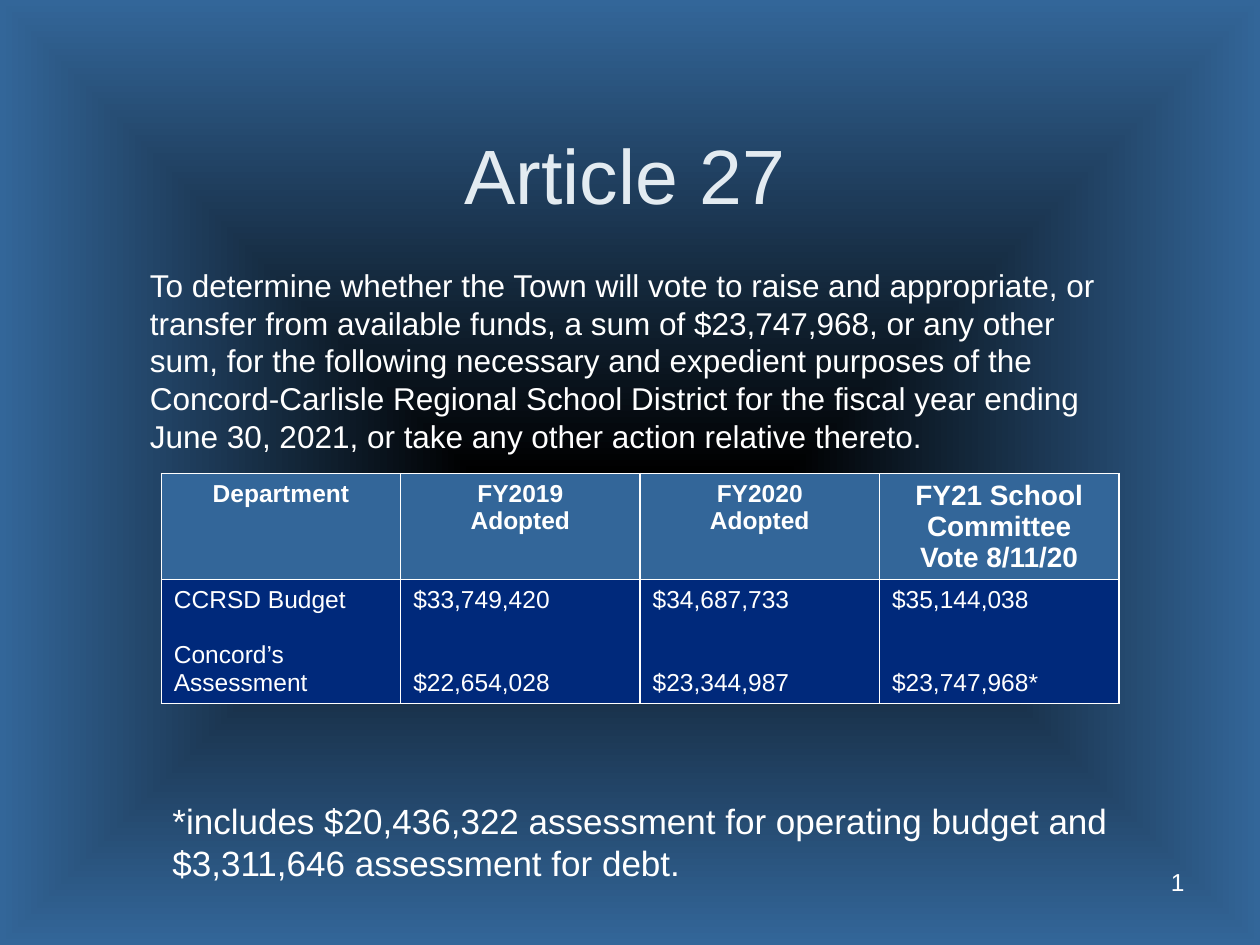
from lxml import etree
from pptx import Presentation
from pptx.dml.color import RGBColor
from pptx.enum.text import MSO_ANCHOR, MSO_AUTO_SIZE, PP_ALIGN
from pptx.oxml import parse_xml
from pptx.oxml.ns import nsdecls, qn
from pptx.util import Inches, Pt

FONT = "Arial"
WHITE = RGBColor(0xFF, 0xFF, 0xFF)
BLACK = RGBColor(0x00, 0x00, 0x00)
PALE = RGBColor(0xE3, 0xEB, 0xF1)
BLUE = RGBColor(0x33, 0x66, 0x99)
NAVY = RGBColor(0x00, 0x29, 0x7B)

HEADINGS = [
    ("Department",),
    ("FY2019", "Adopted"),
    ("FY2020", "Adopted"),
    ("FY21 School Committee", "Vote 8/11/20"),
]
FIGURES = [
    ("CCRSD Budget", "Concord’s Assessment"),
    ("$33,749,420", "$22,654,028"),
    ("$34,687,733", "$23,344,987"),
    ("$35,144,038", "$23,747,968*"),
]


def write(tf, lines, size, color=WHITE, align=PP_ALIGN.LEFT, bold=False):
    tf.text = "\n".join(lines)
    for p in tf.paragraphs:
        p.alignment = align
        p.space_before = Pt(0)
        for r in p.runs:
            r.font.name = FONT
            r.font.size = Pt(size)
            r.font.bold = bold
            r.font.color.rgb = color


def place(sp, box):
    sp.left, sp.top, sp.width, sp.height = (Inches(v) for v in box)


def add_background(slide):
    fill = slide.background.fill
    fill.gradient()
    for stop, color, position in zip(fill.gradient_stops, (BLACK, BLUE), (0, 1)):
        stop.color.rgb = color
        stop.position = position
    grad = slide.background._cSld.find(".//" + qn("a:gradFill"))
    grad.remove(grad.find(qn("a:lin")))
    grad.append(parse_xml(
        f'<a:path {nsdecls("a")} path="rect">'
        '<a:fillToRect l="50000" t="50000" r="50000" b="50000"/></a:path>'))


def add_title(slide, box):
    sp = slide.shapes.title
    place(sp, box)
    tf = sp.text_frame
    tf.auto_size = MSO_AUTO_SIZE.NONE
    tf.vertical_anchor = MSO_ANCHOR.MIDDLE
    write(tf, ["Article 27"], 44, PALE, PP_ALIGN.CENTER)


def add_body(slide, box):
    sp = slide.placeholders[1]
    place(sp, box)
    tf = sp.text_frame
    tf.auto_size = MSO_AUTO_SIZE.NONE
    tf.margin_right = Inches(0.3)
    write(tf, [
        "To determine whether the Town will vote to raise and appropriate, or "
        "transfer from available funds, a sum of $23,747,968, or any other sum, "
        "for the following necessary and expedient purposes of the "
        "Concord-Carlisle Regional School District for the fiscal year ending "
        "June 30, 2021, or take any other action relative thereto."], 18)
    pPr = tf.paragraphs[0]._p.get_or_add_pPr()
    pPr.set("marL", "0")
    pPr.set("indent", "0")
    etree.SubElement(pPr, qn("a:buNone"))


def style_cell(cell, color):
    tcPr = cell._tc.get_or_add_tcPr()
    for side in ("lnL", "lnR", "lnT", "lnB"):
        tcPr.append(parse_xml(
            f'<a:{side} {nsdecls("a")} w="{Pt(1)}"><a:solidFill>'
            f'<a:srgbClr val="{WHITE}"/></a:solidFill></a:{side}>'))
    cell.fill.solid()
    cell.fill.fore_color.rgb = color


def add_budget_table(slide, box):
    table = slide.shapes.add_table(2, 4, *(Inches(v) for v in box)).table
    table.rows[0].height = Inches(0.84)
    table.rows[1].height = Inches(0.98)
    for i, (heading, figures) in enumerate(zip(HEADINGS, FIGURES)):
        head, body = table.cell(0, i), table.cell(1, i)
        style_cell(head, BLUE)
        style_cell(body, NAVY)
        size = 16 if i == 3 else 14
        write(head.text_frame, heading, size, align=PP_ALIGN.CENTER, bold=True)
        write(body.text_frame, figures, 14)
        body.text_frame.paragraphs[1].space_before = Pt(16 if i == 0 else 32)


def add_footnote(slide, box):
    tf = slide.shapes.add_textbox(*(Inches(v) for v in box)).text_frame
    tf.word_wrap = False
    tf.auto_size = MSO_AUTO_SIZE.SHAPE_TO_FIT_TEXT
    write(tf, ["*includes $20,436,322 assessment for operating budget and",
               "$3,311,646 assessment for debt."], 20)


def add_slide_number(slide, box):
    tf = slide.shapes.add_textbox(*(Inches(v) for v in box)).text_frame
    tf.word_wrap = True
    write(tf, ["1"], 14, align=PP_ALIGN.RIGHT)
    r = tf.paragraphs[0].runs[0]._r
    r.tag = qn("a:fld")
    r.set("id", "{B6F15528-21DE-4FAA-801E-634DDDAF4B2B}")
    r.set("type", "slidenum")


def main():
    prs = Presentation()
    prs.slide_width, prs.slide_height = Inches(10), Inches(7.5)
    slide = prs.slides.add_slide(prs.slide_layouts[1])
    add_background(slide)
    add_title(slide, (1, 0.92, 7.92, 0.92))
    add_body(slide, (1.09, 2.06, 8, 4.62))
    add_budget_table(slide, (1.28, 3.76, 7.6, 1.82))
    add_footnote(slide, (1.27, 6.3, 7.76, 0.77))
    add_slide_number(slide, (7.17, 6.83, 2.33, 0.52))
    prs.save("out.pptx")


if __name__ == "__main__":
    main()
